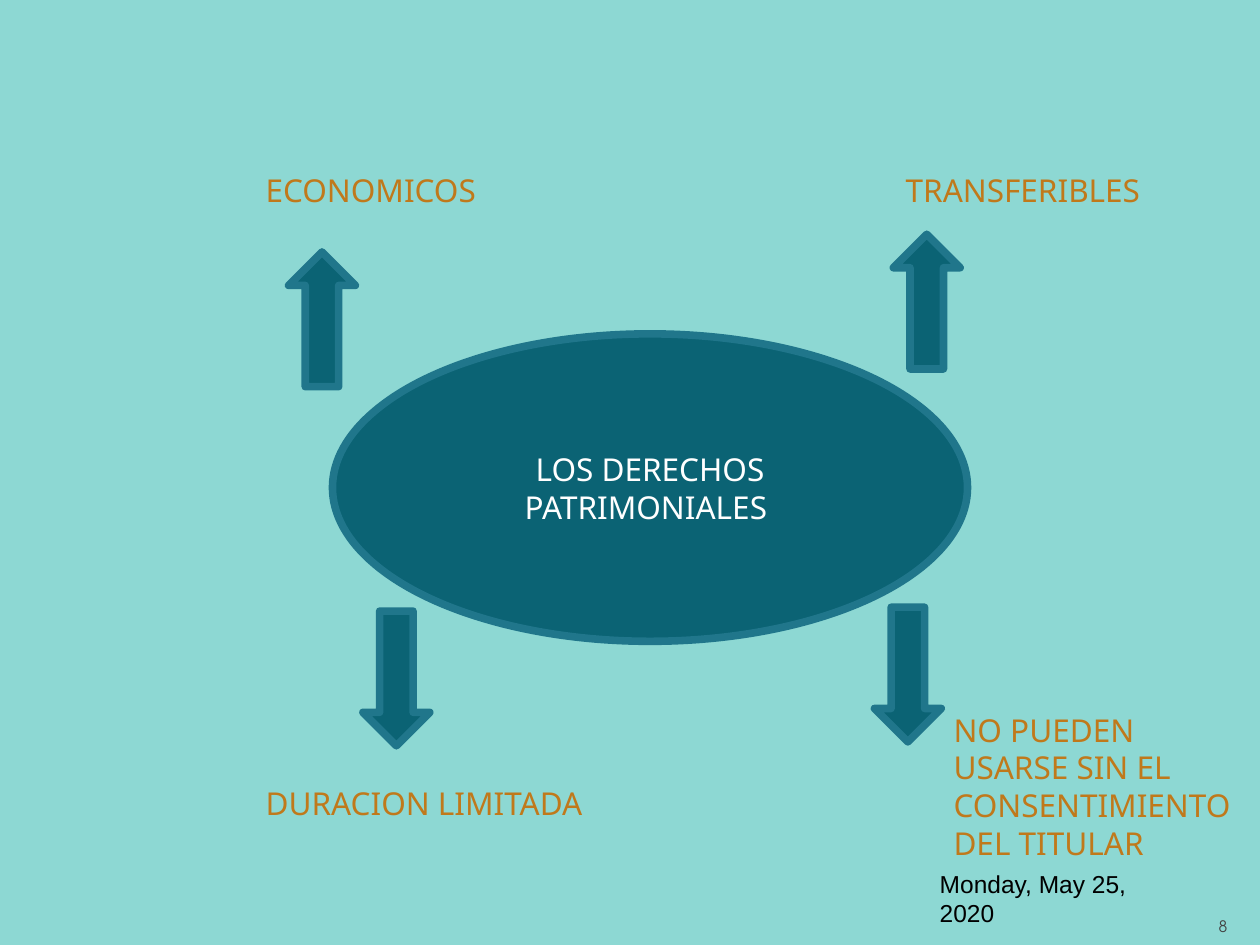
from lxml import etree
from pptx import Presentation
from pptx.dml.color import RGBColor
from pptx.enum.shapes import MSO_SHAPE
from pptx.enum.text import MSO_ANCHOR, MSO_AUTO_SIZE, PP_ALIGN
from pptx.oxml.ns import qn
from pptx.util import Pt

OVAL, UP, DOWN = MSO_SHAPE.OVAL, MSO_SHAPE.UP_ARROW, MSO_SHAPE.DOWN_ARROW
TOP, MIDDLE, BOTTOM = MSO_ANCHOR.TOP, MSO_ANCHOR.MIDDLE, MSO_ANCHOR.BOTTOM
LEFT, CENTER, RIGHT = PP_ALIGN.LEFT, PP_ALIGN.CENTER, PP_ALIGN.RIGHT
GROW = MSO_AUTO_SIZE.SHAPE_TO_FIT_TEXT


def color(code):
    return RGBColor.from_string(code)


class Deck:
    back, fill, edge = "8DD8D3", "0B6374", "20768B"
    accent, light = "C0791B", "FFFFFF"
    font, size, weight = "Noto Sans", 18, 4.33

    def __init__(self, slide):
        self.slide = slide
        slide.background.fill.solid()
        slide.background.fill.fore_color.rgb = color(self.back)

    def set_text(self, shape, text, tint, font=font, size=size, align=LEFT, anchor=TOP):
        frame = shape.text_frame
        frame.word_wrap = True
        frame.vertical_anchor = anchor
        para = frame.paragraphs[0]
        para.alignment = align
        run = para.add_run()
        run.text = text
        run.font.name = font
        run.font.size = Pt(size)
        run.font.color.rgb = color(tint)

    def shape(self, kind, x, y, w, h):
        shape = self.slide.shapes.add_shape(kind, Pt(x), Pt(y), Pt(w), Pt(h))
        shape.shadow.inherit = False
        shape.fill.solid()
        shape.fill.fore_color.rgb = color(self.fill)
        shape.line.color.rgb = color(self.edge)
        shape.line.width = Pt(self.weight)
        line = shape.element.spPr.find(qn("a:ln"))
        etree.SubElement(line, qn("a:round"))
        return shape

    def arrow(self, kind, x, y):
        self.shape(kind, x, y, 38.2, 77)

    def text(self, text, x, y, w, h, tint, **style):
        box = self.slide.shapes.add_textbox(Pt(x), Pt(y), Pt(w), Pt(h))
        self.set_text(box, text, tint, **style)
        return box

    def label(self, text, x, y, w, h=29):
        box = self.text(text, x, y, w, h, self.accent)
        box.text_frame.auto_size = GROW


def main():
    prs = Presentation()
    prs.slide_width, prs.slide_height = Pt(720), Pt(540)
    deck = Deck(prs.slides.add_slide(prs.slide_layouts[6]))

    deck.text("Monday, May 25, 2020", 529.9, 504.7, 151.2, 28.8, "000000",
              font="Arial", size=14, anchor=BOTTOM)
    deck.text("8", 665.3, 497.5, 43.2, 41, "424242",
              font="TeX Gyre Adventor", size=9, align=RIGHT, anchor=BOTTOM)

    oval = deck.shape(OVAL, 190, 190.8, 362.9, 175.7)
    deck.set_text(oval, "LOS DERECHOS PATRIMONIALES ", deck.light,
                  align=CENTER, anchor=MIDDLE)

    for kind, x, y in ((UP, 164.9, 144), (UP, 510.5, 133.9),
                       (DOWN, 207.4, 349.2), (DOWN, 499.7, 347)):
        deck.arrow(kind, x, y)

    deck.label("ECONOMICOS", 144.7, 94.3, 136)
    deck.label("TRANSFERIBLES", 510.5, 94.3, 149)
    deck.label("DURACION LIMITADA", 144.7, 444.2, 201.6)
    deck.label("NO PUEDEN USARSE SIN EL CONSENTIMIENTO DEL TITULAR",
               537.8, 402.5, 173.5, 94.3)

    prs.save("out.pptx")


if __name__ == "__main__":
    main()
